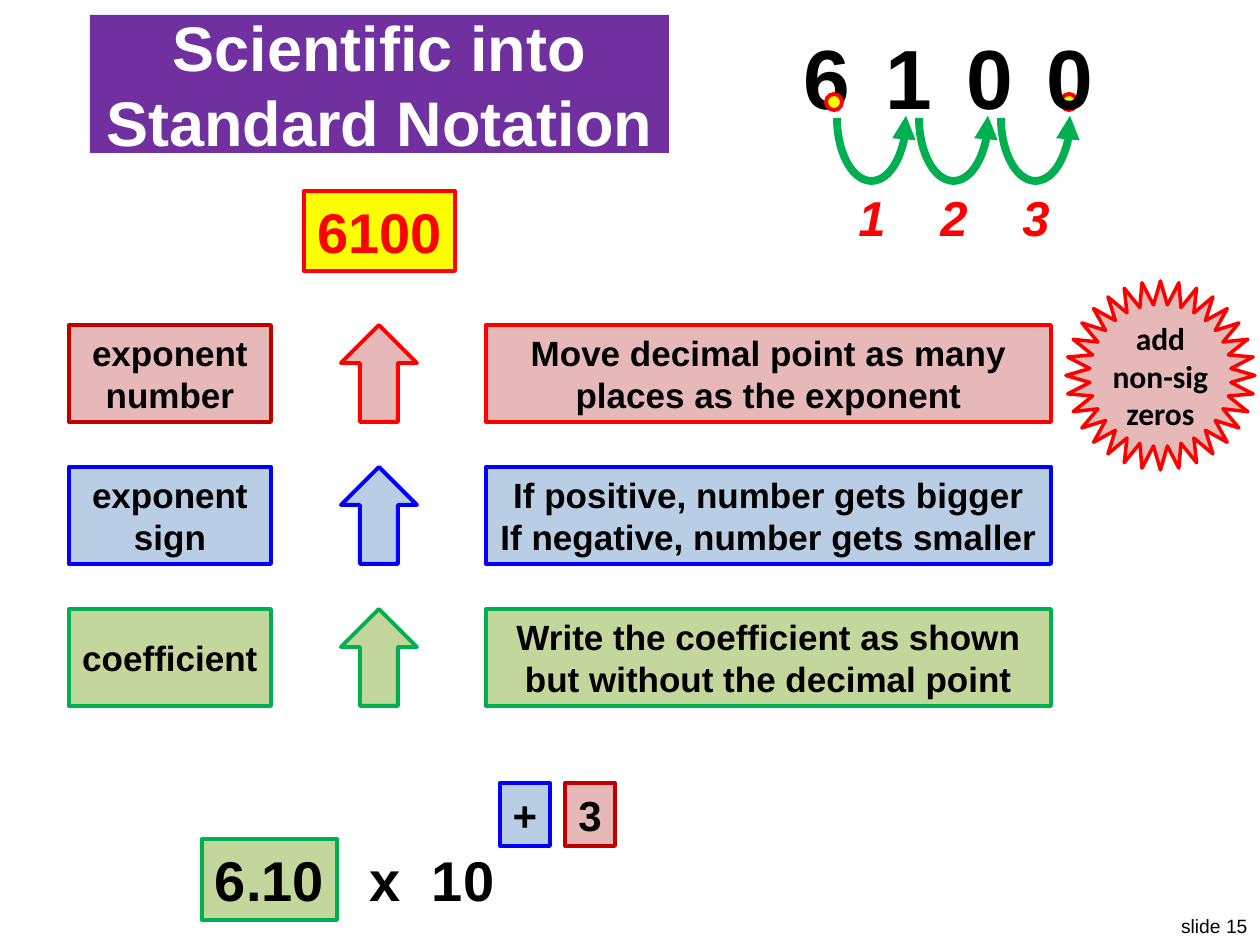
from pptx import Presentation
from pptx.dml.color import RGBColor
from pptx.enum.shapes import MSO_SHAPE
from pptx.enum.text import MSO_ANCHOR, MSO_AUTO_SIZE, PP_ALIGN
from pptx.oxml.ns import qn
from pptx.util import Emu, Pt

RECT = MSO_SHAPE.RECTANGLE
ARROW = MSO_SHAPE.DOWN_ARROW
ARC = MSO_SHAPE.ARC
OVAL = MSO_SHAPE.OVAL
STAR = MSO_SHAPE.STAR_32_POINT
LEFT, CENTER, RIGHT = PP_ALIGN.LEFT, PP_ALIGN.CENTER, PP_ALIGN.RIGHT
TOP, MIDDLE = MSO_ANCHOR.TOP, MSO_ANCHOR.MIDDLE
GROW, FIXED = MSO_AUTO_SIZE.SHAPE_TO_FIT_TEXT, MSO_AUTO_SIZE.NONE

BLACK = RGBColor(0x00, 0x00, 0x00)
WHITE = RGBColor(0xFF, 0xFF, 0xFF)
PURPLE = RGBColor(0x70, 0x30, 0xA0)
YELLOW = RGBColor(0xFF, 0xFF, 0x00)
RED = RGBColor(0xFF, 0x00, 0x00)
DARK_RED = RGBColor(0xC0, 0x00, 0x00)
BLUE = RGBColor(0x00, 0x00, 0xFF)
GREEN = RGBColor(0x00, 0xB0, 0x50)
PINK = RGBColor(0xE6, 0xB9, 0xB8)
PALE_BLUE = RGBColor(0xB9, 0xCD, 0xE5)
PALE_GREEN = RGBColor(0xC3, 0xD6, 0x9B)

ROW_TOP, ROW_STEP, ROW_HEIGHT = 325, 142, 97
HOP_LEFT, HOP_STEP = 837, 82

# label, rule, fill, label line, rule and arrow line
ROWS = [
    ("exponent\nnumber", "Move decimal point as many places as the exponent",
     PINK, DARK_RED, RED),
    ("exponent\nsign",
     "If positive, number gets bigger\nIf negative, number gets smaller",
     PALE_BLUE, BLUE, BLUE),
    ("coefficient",
     "Write the coefficient as shown but without the decimal point",
     PALE_GREEN, GREEN, GREEN),
]


def px(length):
    return Emu(round(length * 914400 / 126))


def add_span(para, text, size=20, color=BLACK, font="Arial", bold=True,
             italic=False, spacing=0):
    span = para.add_run()
    span.text = text
    span.font.size = Pt(size)
    span.font.name = font
    span.font.bold = bold
    span.font.italic = italic
    span.font.color.rgb = color
    if spacing:
        span.font._element.set("spc", str(round(spacing * 100)))


def write_text(box, text, align=CENTER, anchor=TOP, wrap=False, fit=GROW,
               **look):
    """Put each line of text into a paragraph of its own."""
    frame = box.text_frame
    frame.word_wrap = wrap
    frame.auto_size = fit
    frame.vertical_anchor = anchor
    for index, line in enumerate(text.split("\n")):
        para = frame.add_paragraph() if index else frame.paragraphs[0]
        para.alignment = align
        add_span(para, line, **look)
    return frame


def add_label(page, area, text, **look):
    box = page.shapes.add_textbox(*map(px, area))
    return write_text(box, text, **look)


def add_figure(page, kind, area, fill=None, line=None, weight=2.25):
    figure = page.shapes.add_shape(kind, *map(px, area))
    figure.shadow.inherit = False
    if fill is None:
        figure.fill.background()
    else:
        figure.fill.solid()
        figure.fill.fore_color.rgb = fill
    if line is None:
        figure.line.fill.background()
    else:
        figure.line.color.rgb = line
        figure.line.width = Pt(weight)
    return figure


def flip(figure, *directions):
    transform = figure._element.spPr.find(qn("a:xfrm"))
    for direction in directions:
        transform.set(direction, "1")


def add_row(page, top, label, rule, fill, label_line, rule_line):
    box = add_figure(page, RECT, (69, top, 202, ROW_HEIGHT), fill, label_line)
    write_text(box, label, anchor=MIDDLE, fit=FIXED)
    arrow = add_figure(page, ARROW, (341, top, 76, ROW_HEIGHT), fill, rule_line)
    flip(arrow, "flipV")
    box = add_figure(page, RECT, (486, top, 565, ROW_HEIGHT), fill, rule_line)
    write_text(box, rule, wrap=True)


def add_hop(page, left, number):
    """Draw one numbered jump of the decimal point."""
    arc = add_figure(page, ARC, (left, 55, 69, 126), line=GREEN, weight=4.5)
    arc.adjustments[0] = 105.74
    arc.adjustments[1] = 0
    flip(arc, "flipH", "flipV")
    outline = arc.line._get_or_add_ln()
    head = outline.makeelement(qn("a:headEnd"), {"type": "triangle"})
    outline.append(head)
    add_label(page, (left + 9, 181, 53, 72), str(number), align=LEFT,
              size=28, color=RED, italic=True)


def add_expression(page):
    frame = add_label(page, (357, 839, 150, 81), "x ", align=LEFT, size=32,
                      spacing=4.5)
    add_span(frame.paragraphs[0], "10", size=32)
    parts = [
        ((202, 839, 135, 81), "6.10", 32, PALE_GREEN, GREEN),
        ((500, 783, 50, 63), "+", 24, PALE_BLUE, BLUE),
        ((565, 783, 50, 63), "3", 24, PINK, DARK_RED),
    ]
    for area, text, size, fill, line in parts:
        write_text(add_figure(page, RECT, area, fill, line), text, size=size)


def main():
    deck = Presentation()
    deck.slide_width, deck.slide_height = px(1260), px(945)
    page = deck.slides.add_slide(deck.slide_layouts[6])

    add_label(page, (1165, 908, 95, 37), "slide 15", align=RIGHT, size=11,
              bold=False)
    title = add_figure(page, RECT, (90, 15, 579, 138), PURPLE)
    write_text(title, "Scientific into Standard Notation", anchor=MIDDLE,
               wrap=True, fit=FIXED, size=36, color=WHITE)
    result = add_figure(page, RECT, (304, 191, 151, 80), YELLOW, RED)
    write_text(result, "6100", size=32, color=RED)

    for index, row in enumerate(ROWS):
        add_row(page, ROW_TOP + index * ROW_STEP, *row)

    add_label(page, (752, 19, 274, 115), "610", align=RIGHT, size=48,
              spacing=20)
    for index in range(3):
        add_hop(page, HOP_LEFT + index * HOP_STEP, index + 1)
    for left in (1061, 826):
        add_figure(page, OVAL, (left, 94, 16, 16), YELLOW, RED)

    add_expression(page)

    star = add_figure(page, STAR, (1066, 281, 189, 189), PINK, RED, 2)
    frame = write_text(star, "add non-sig zeros", anchor=MIDDLE, wrap=True,
                       fit=FIXED, size=18, font="Calibri")
    frame.margin_left = frame.margin_right = 0
    frame.margin_top = frame.margin_bottom = 0
    add_label(page, (998, 19, 108, 115), "0", align=RIGHT, size=48, spacing=20)

    deck.save("out.pptx")


if __name__ == "__main__":
    main()
